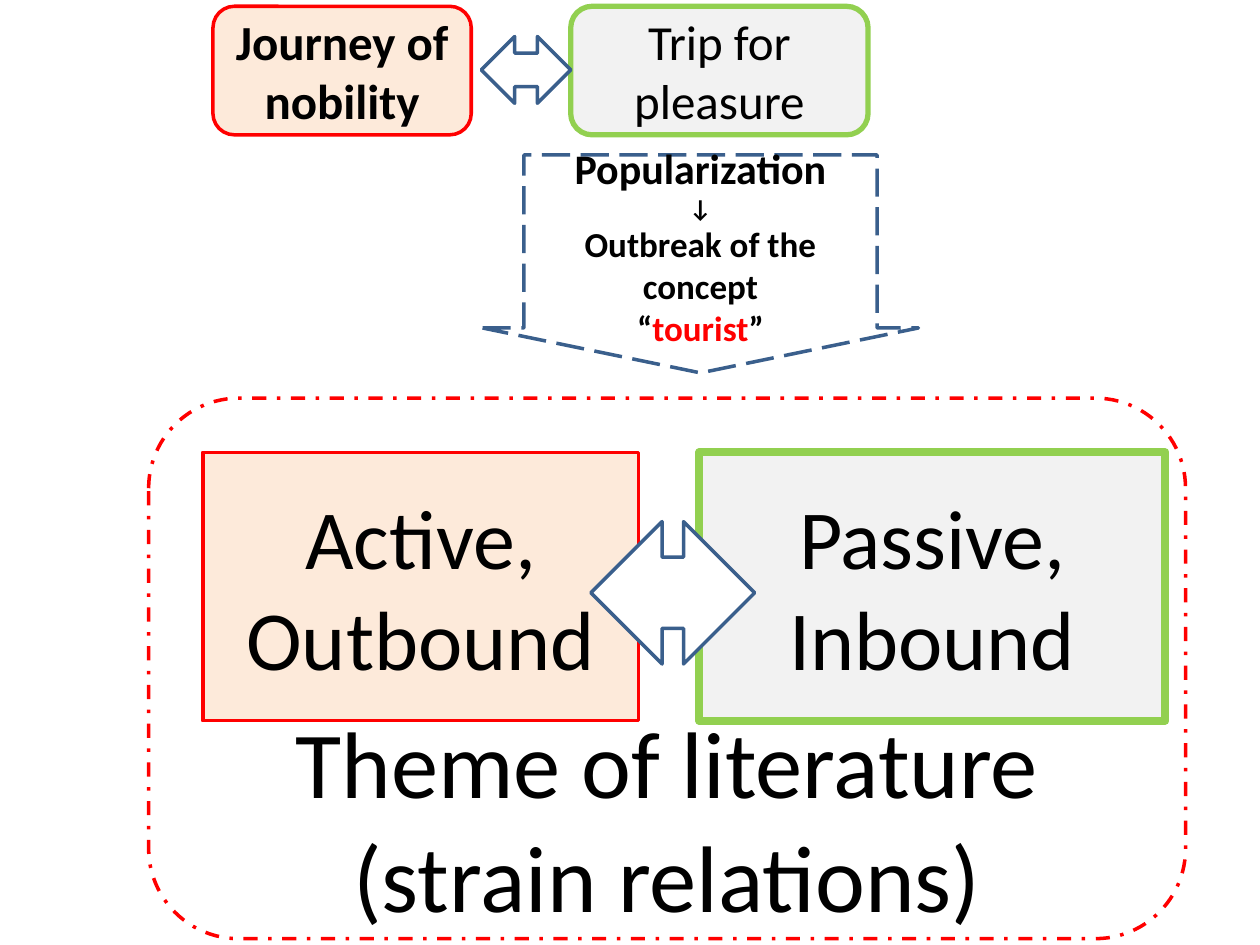
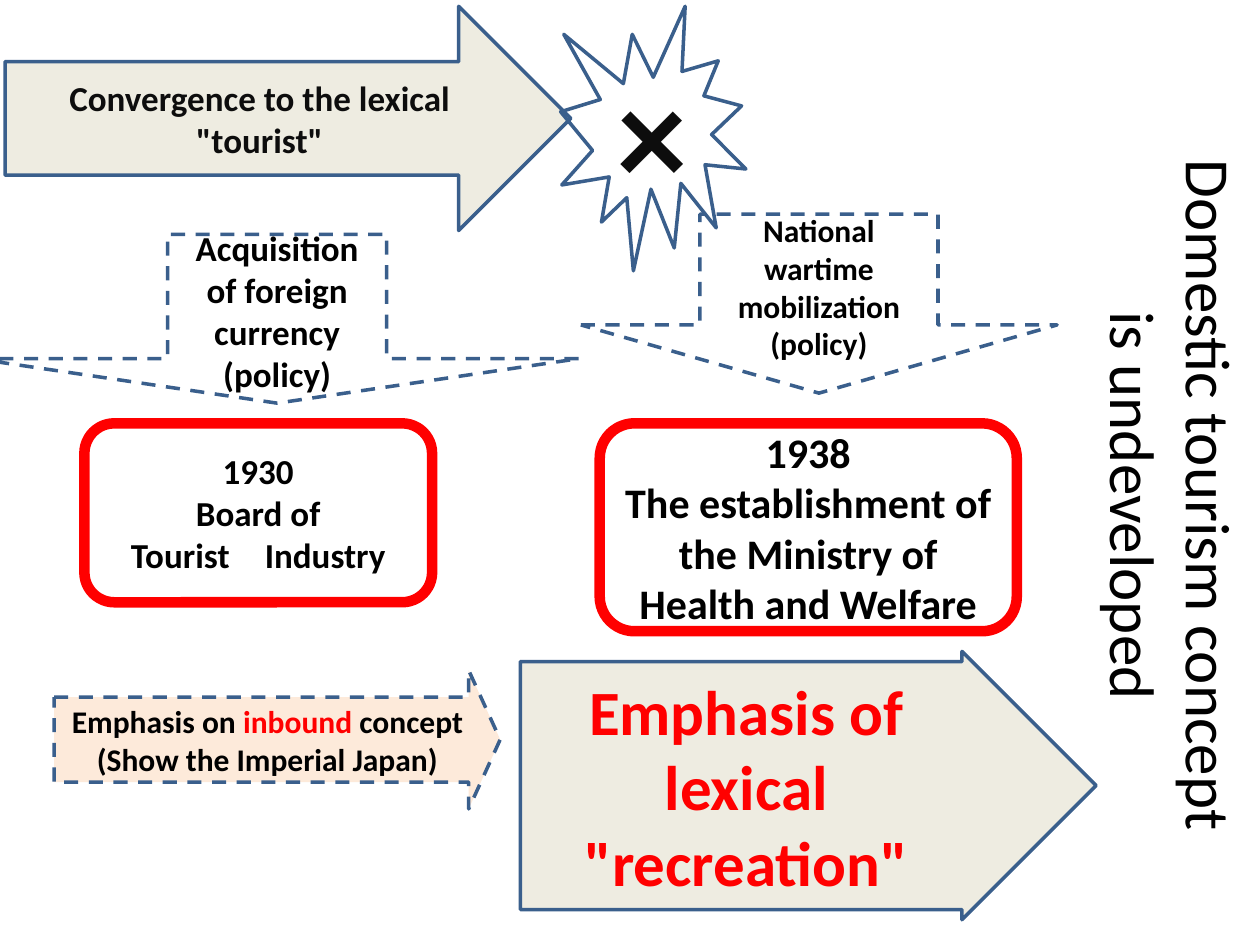
"""Build two slides of arrows and boxes on the history of the tourist concept."""
import dataclasses

import pptx
import pptx.dml.color
import pptx.enum.dml
import pptx.enum.shapes
import pptx.enum.text
import pptx.util

KIND = pptx.enum.shapes.MSO_SHAPE
DASH = pptx.enum.dml.MSO_LINE
ALIGN = pptx.enum.text.PP_ALIGN
ANCHOR = pptx.enum.text.MSO_ANCHOR
FIT = pptx.enum.text.MSO_AUTO_SIZE
SCALE = 9144


@dataclasses.dataclass(frozen=True)
class Theme:
    """Hold the colours, type sizes and outlines of both slides."""
    font: str = "Calibri"
    black: str = "000000"
    ink: str = "0D0D0D"
    red: str = "FF0000"
    green: str = "92D050"
    blue: str = "3A5F8C"
    white: str = "FFFFFF"
    peach: str = "FDEADA"
    grey: str = "F2F2F2"
    sand: str = "EEECE1"
    tiny: int = 14
    small: int = 18
    text: int = 20
    lead: int = 24
    label: int = 28
    head: int = 36
    large: int = 48
    huge: int = 54
    mark: int = 80
    thin: float = 2
    firm: float = 3
    bold: float = 4.5
    thick: float = 6


T = Theme()


def px(num):
    """Turn px into EMU."""
    return pptx.util.Emu(round(num * SCALE))


def rgb(code):
    """Turn a hex code into a colour."""
    return pptx.dml.color.RGBColor.from_string(code)


def put(item, form):
    """Set each attribute in a dict of format values."""
    for key, val in form.items():
        setattr(item, key, val)


def sub(box, left, top, wide, high):
    """Give a part's box from its place within a region's box."""
    return box[0] + left, box[1] + top, wide, high


def write(frame, lines, size, bold=False, color=T.black):
    """Fill a frame with lines, each a string or a list of (words, format) runs."""
    for num, line in enumerate(lines):
        para = frame.add_paragraph() if num else frame.paragraphs[0]
        para.alignment = ALIGN.CENTER
        for words, form in [(line, {})] if isinstance(line, str) else line:
            run = para.add_run()
            run.text = words
            look = {"size": size, "bold": bold, "color": color} | form
            put(run.font, {"name": T.font, "size": pptx.util.Pt(look["size"]),
                           "bold": look["bold"]})
            run.font.color.rgb = rgb(look["color"])


def draw(page, kind, box, line=T.blue, width=T.thin, fill=None, dash=None, adj=()):
    """Add one preset shape and return its text frame."""
    shape = page.shapes.add_shape(kind, *map(px, box))
    shape.shadow.inherit = False
    for num, val in enumerate(adj):
        shape.adjustments[num] = val
    if fill:
        shape.fill.solid()
        shape.fill.fore_color.rgb = rgb(fill)
    else:
        shape.fill.background()
    shape.line.color.rgb = rgb(line)
    put(shape.line, {"width": pptx.util.Pt(width), "dash_style": dash})
    put(shape.text_frame, {"word_wrap": True, "vertical_anchor": ANCHOR.MIDDLE})
    return shape.text_frame


def pair(page, box, kind, left, right, link, size, edge, bold=False):
    """Draw a peach box and a grey box joined by a double arrow."""
    (wide, first), (start, last) = left, right
    high = box[3]
    frame = draw(page, kind, sub(box, 0, 0, wide, high), T.red, fill=T.peach)
    write(frame, first, size, bold)
    frame = draw(page, kind, sub(box, start, 0, box[2] - start, high),
                 T.green, edge, T.grey)
    write(frame, last, size)
    draw(page, KIND.LEFT_RIGHT_ARROW, sub(box, *link), fill=T.white)


def turn(page, box):
    """Draw the dashed arrow that leads to the tourist concept."""
    frame = draw(page, KIND.DOWN_ARROW, box, dash=DASH.LONG_DASH, adj=(0.81, 0.206))
    write(frame, [
        [("Popularization", {"size": T.lead})],
        [("↓", {"size": T.tiny})],
        "Outbreak of the concept",
        [("“", {}), ("tourist", {"color": T.red}), ("”", {})],
    ], T.text, True)


def theme(page, box):
    """Draw the dashed frame with its caption and the pair inside."""
    frame = draw(page, KIND.ROUNDED_RECTANGLE, box, T.red, dash=DASH.DASH_DOT)
    put(frame, {"margin_top": px(237), "margin_bottom": 0})
    write(frame, ["Theme of literature", "(strain relations)"], T.huge)
    pair(page, sub(box, 43, 43, 764, 213), KIND.RECTANGLE,
         (346, ["Active,", "Outbound"]), (394, ["Passive,", "Inbound"]),
         (308, 55, 130, 113), T.large, T.bold)


def clash(page, box):
    """Draw the arrow of convergence and the burst that stops it."""
    frame = draw(page, KIND.RIGHT_ARROW, sub(box, 0, 0, 449, 178),
                 fill=T.sand, adj=(0.506, 0.5))
    write(frame, ['Convergence to the lexical "tourist"'], T.text, True, T.ink)
    frame = draw(page, KIND.EXPLOSION1, sub(box, 441, 0, 147, box[3]))
    write(frame, ["×"], T.mark, True, T.ink)


def cause(page, box, high, adj, policy, size, card, lines, type_size):
    """Draw a policy arrow above the red card of its result."""
    frame = draw(page, KIND.DOWN_ARROW, sub(box, 0, 0, box[2], high),
                 dash=DASH.DASH, adj=adj)
    write(frame, [policy], size, True)
    frame = draw(page, KIND.ROUNDED_RECTANGLE, sub(box, *card), T.red, T.thick)
    write(frame, lines, type_size, True)


def trend(page, box):
    """Draw the two arrows of emphasis along the foot."""
    frame = draw(page, KIND.RIGHT_ARROW, sub(box, 0, 15, 354, 110),
                 fill=T.peach, dash=DASH.DASH, adj=(0.614, 0.227))
    write(frame, [
        [("Emphasis on ", {}), ("inbound", {"color": T.red}), (" concept", {})],
        "(Show the Imperial Japan)",
    ], T.small, True)
    frame = draw(page, KIND.RIGHT_ARROW, sub(box, 370, 0, 457, box[3]),
                 fill=T.sand, adj=(0.924, 0.5))
    write(frame, ['Emphasis of lexical "recreation"'], T.head, True, T.red)


def side(page, box):
    """Add the remark turned to run down the right edge."""
    note = page.shapes.add_textbox(*map(px, box))
    note.rotation = 90
    frame = note.text_frame
    put(frame, {"word_wrap": False, "auto_size": FIT.SHAPE_TO_FIT_TEXT})
    write(frame, ["Domestic tourism concept", " is undeveloped"], T.head)
    frame.paragraphs[0].alignment = ALIGN.LEFT


def origin(page):
    """Lay out the slide on how the concept arose."""
    pair(page, (169, 5, 520, 102), KIND.ROUNDED_RECTANGLE,
         (205, ["Journey of nobility"]), (284, ["Trip for pleasure"]),
         (213, 24, 71, 53), T.label, T.firm, True)
    turn(page, (383, 123, 346, 173))
    theme(page, (118, 316, 823, 429))


def policy(page):
    """Lay out the slide on policy and the change of words."""
    trend(page, (43, 517, 827, 213))
    cause(page, (461, 170, 378, 331), 142, (0.5, 0.381),
          "National wartime mobilization (policy)", T.small, (15, 166, 331, 165),
          ["1938", "The establishment of the Ministry of Health and Welfare"], T.lead)
    cause(page, (-20, 186, 480, 292), 134, (0.362, 0.264),
          "Acquisition of foreign currency (policy)", T.text, (87, 150, 276, 142),
          ["1930", "　Board of　Tourist　Industry"], T.text)
    clash(page, (4, 5, 588, 210))
    side(page, (652, 330, 557, 131))


def main():
    """Build both slides and save the deck."""
    deck = pptx.Presentation()
    put(deck, {"slide_width": px(1000), "slide_height": px(750)})
    for build in (origin, policy):
        build(deck.slides.add_slide(deck.slide_layouts[6]))
    deck.save("out.pptx")


if __name__ == "__main__":
    main()
